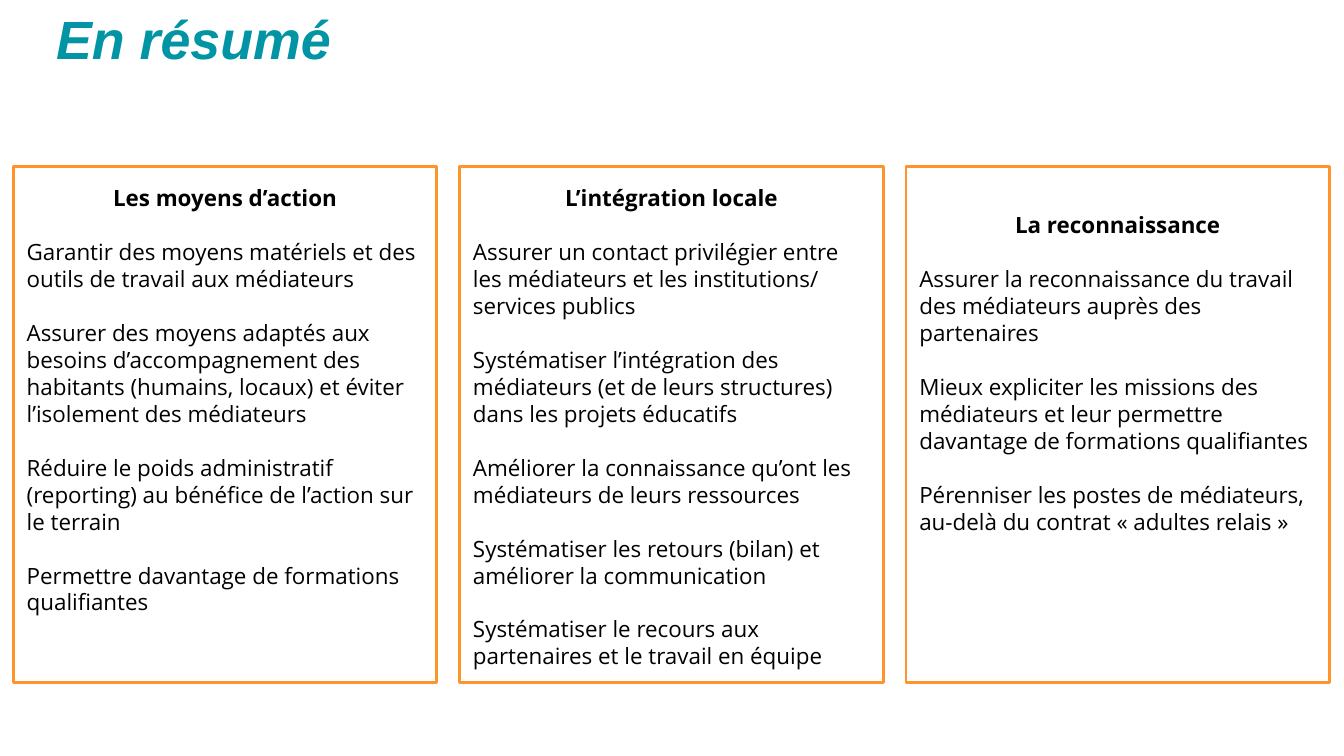
from pptx import Presentation
from pptx.dml.color import RGBColor
from pptx.enum.shapes import MSO_SHAPE
from pptx.enum.text import MSO_ANCHOR, PP_ALIGN
from pptx.util import Pt

BOX = MSO_SHAPE.FLOWCHART_PROCESS
TOP, BOTTOM = MSO_ANCHOR.TOP, MSO_ANCHOR.BOTTOM
LEFT, CENTER = PP_ALIGN.LEFT, PP_ALIGN.CENTER

TITLE = "En résumé"
CARDS = [
    {"head": "Les moyens d’action", "drop": 0, "items": [
        "Garantir des moyens matériels et des outils de travail aux médiateurs",
        "Assurer des moyens adaptés aux besoins d’accompagnement des habitants (humains, locaux) et éviter l’isolement des médiateurs",
        "Réduire le poids administratif (reporting) au bénéfice de l’action sur le terrain",
        "Permettre davantage de formations qualifiantes",
    ]},
    {"head": "L’intégration locale", "drop": 0, "items": [
        "Assurer un contact privilégier entre les médiateurs et les institutions/ services publics",
        "Systématiser l’intégration des médiateurs (et de leurs structures) dans les projets éducatifs",
        "Améliorer la connaissance qu’ont les médiateurs de leurs ressources",
        "Systématiser les retours (bilan) et améliorer la communication",
        "Systématiser le recours aux partenaires et le travail en équipe",
    ]},
    {"head": "La reconnaissance", "drop": 1, "items": [
        "Assurer la reconnaissance du travail des médiateurs auprès des partenaires",
        "Mieux expliciter les missions des médiateurs et leur permettre davantage de formations qualifiantes",
        "Pérenniser les postes de médiateurs, au-delà du contrat « adultes relais »",
    ]},
]

THEME = {
    "teal": RGBColor(0x00, 0x94, 0xA4),
    "orange": RGBColor(0xFF, 0x94, 0x2B),
    "black": RGBColor(0, 0, 0),
    "title": 28.8,
    "body": 12,
    "row": 14.44,
    "sans": "Arial",
    "open": "Open Sans",
}
EDGE, STEP, WIDTH = 7.2, 239.1, 226.8
CARD_TOP, CARD_TALL = 89.3, 276.5
INSET, HEAD_TOP = 7.2, 9.6


def set_frame(shape, anchor, top=INSET):
    frame = shape.text_frame
    frame.word_wrap = True
    frame.vertical_anchor = anchor
    frame.margin_left = frame.margin_right = Pt(INSET)
    frame.margin_top, frame.margin_bottom = Pt(top), Pt(0 if anchor == TOP else INSET)
    return frame


def put_text(para, text, font=THEME["open"], size=THEME["body"],
             color=THEME["black"], bold=False, italic=False,
             align=LEFT, row=None, gap=0):
    para.alignment = align
    para.space_after = Pt(gap)
    if row:
        para.line_spacing = Pt(row)
    run = para.add_run()
    run.text = text
    run.font.name = font
    run.font.size = Pt(size)
    run.font.color.rgb = color
    run.font.bold = bold
    run.font.italic = italic


def add_card(slide, left, card):
    box = slide.shapes.add_shape(BOX, Pt(left), Pt(CARD_TOP), Pt(WIDTH), Pt(CARD_TALL))
    box.shadow.inherit = False
    box.fill.background()
    box.line.color.rgb = THEME["orange"]
    box.line.width = Pt(1.5)
    row = THEME["row"]
    frame = set_frame(box, TOP, HEAD_TOP + card["drop"] * row)
    put_text(frame.paragraphs[0], card["head"], bold=True, align=CENTER, row=row, gap=row)
    for item in card["items"]:
        put_text(frame.add_paragraph(), item, row=row, gap=row)


def main():
    deck = Presentation()
    deck.slide_width, deck.slide_height = Pt(720), Pt(405)
    slide = deck.slides.add_slide(deck.slide_layouts[6])
    title = slide.shapes.add_textbox(Pt(23), Pt(0), Pt(671), Pt(44.6))
    put_text(set_frame(title, BOTTOM).paragraphs[0], TITLE, font=THEME["sans"],
             size=THEME["title"], color=THEME["teal"], bold=True, italic=True)
    for spot, card in enumerate(CARDS):
        add_card(slide, EDGE + spot * STEP, card)
    deck.save("out.pptx")


if __name__ == "__main__":
    main()
